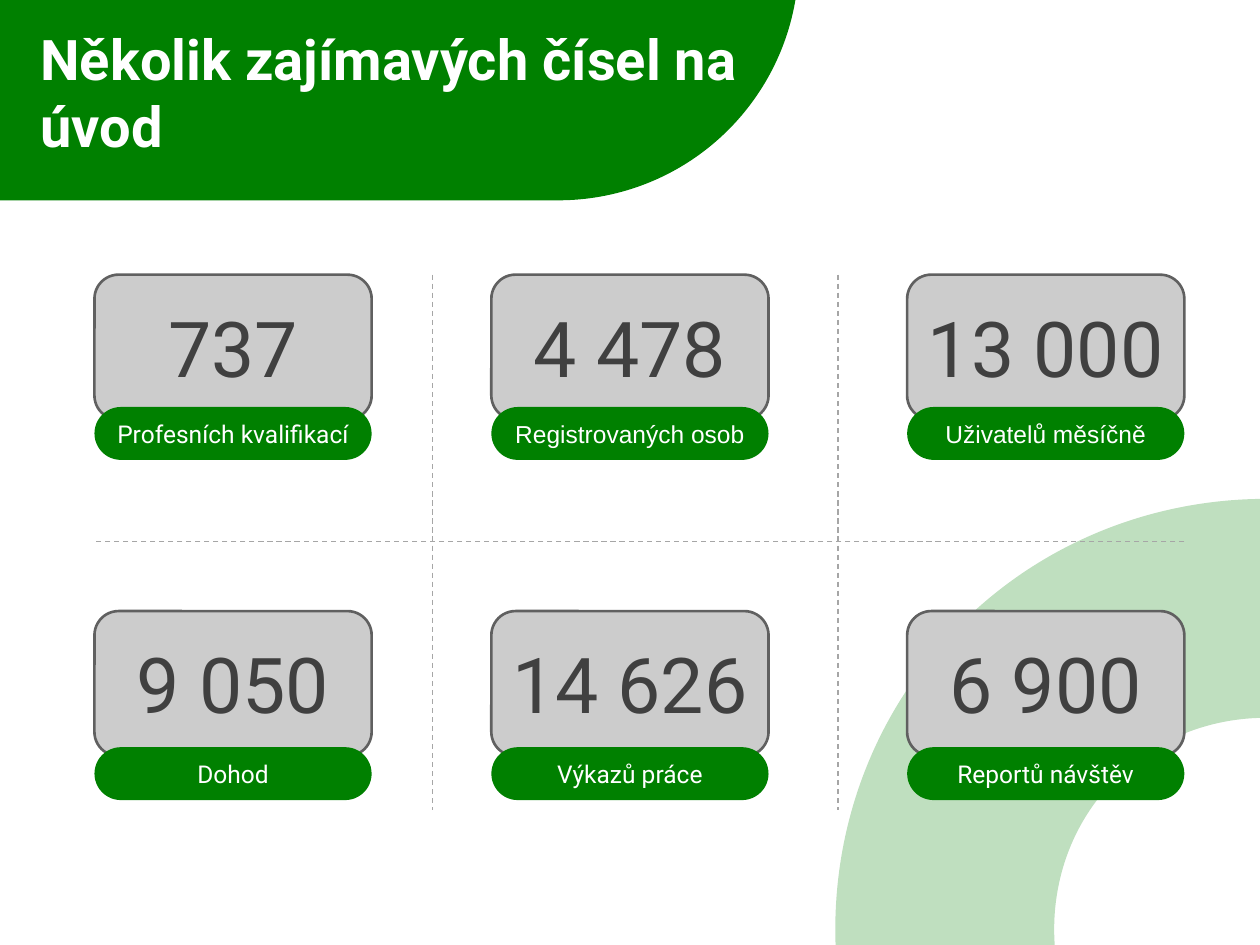
from pptx import Presentation
from pptx.dml.color import RGBColor
from pptx.enum.dml import MSO_LINE_DASH_STYLE as DASH
from pptx.enum.shapes import MSO_CONNECTOR, MSO_SHAPE
from pptx.enum.text import MSO_ANCHOR, MSO_AUTO_SIZE, PP_ALIGN
from pptx.oxml.ns import qn
from pptx.util import Inches, Pt
from lxml.etree import SubElement

COLORS = {
    "green": "008000",
    "card": "CCCCCC",
    "border": "606060",
    "number": "404040",
    "divider": "A6A6A6",
    "white": "FFFFFF",
}

# Grid of statistics, in inches
COLUMNS = (0.75, 3.9, 7.2)
CARD_TOPS = (2.18, 4.85)
LABEL_TOPS = (3.23, 5.93)
CARD_WIDTH, CARD_HEIGHT, LABEL_HEIGHT = 2.2, 1.15, 0.42
GRID_RIGHT, GRID_BOTTOM = COLUMNS[-1] + CARD_WIDTH, 6.43

STATISTICS = (
    (("737", "Profesních kvalifikací", "Roboto"),
     ("4 478", "Registrovaných osob", "Arial"),
     ("13 000", "Uživatelů měsíčně", "Arial")),
    (("9 050", "Dohod", "Roboto"),
     ("14 626", "Výkazů práce", "Roboto"),
     ("6 900", "Reportů návštěv", "Roboto")),
)


def rgb(name):
    return RGBColor.from_string(COLORS[name])


def add_shape(slide, kind, box, fill, border=None, rounding=None):
    shape = slide.shapes.add_shape(kind, *map(Inches, box))
    shape.shadow.inherit = False
    shape.fill.solid()
    shape.fill.fore_color.rgb = rgb(fill)
    if border:
        shape.line.color.rgb = rgb(border)
        shape.line.width = Pt(1.5)
    else:
        shape.line.fill.background()
    if rounding is not None:
        shape.adjustments[0] = rounding
    return shape


def write(shape, text, size, color, font="Roboto", align=PP_ALIGN.CENTER, bold=False):
    frame = shape.text_frame
    frame.text = text
    frame.word_wrap = True
    frame.vertical_anchor = MSO_ANCHOR.MIDDLE
    paragraph = frame.paragraphs[0]
    paragraph.alignment = align
    run_font = paragraph.runs[0].font
    run_font.name, run_font.size, run_font.bold = font, Pt(size), bold
    run_font.color.rgb = rgb(color)


def add_header(slide):
    # Pale ring in the lower right corner
    ring = add_shape(slide, MSO_SHAPE.BLOCK_ARC, (6.69, 3.9, 6.95, 7.18), "green")
    ring.rotation = 313.9
    ring_color = ring.fill._xPr.find(qn("a:solidFill"))[0]
    SubElement(ring_color, qn("a:alpha")).set("val", "25000")

    # Green banner behind the title
    banner = add_shape(slide, MSO_SHAPE.ROUNDED_RECTANGLE,
                       (-3.5, -2.23, 9.84, 3.82), "green", rounding=0.5)

    title = slide.shapes.title
    title.left, title.top, title.width, title.height = map(
        Inches, (0.22, 0.17, 5.96, 1.11))
    write(title, "Několik zajímavých čísel na úvod", 32, "white",
          align=PP_ALIGN.LEFT, bold=True)
    title.text_frame.auto_size = MSO_AUTO_SIZE.NONE
    for backdrop in (ring, banner):
        title.element.addprevious(backdrop.element)


def add_divider(slide, start, end):
    divider = slide.shapes.add_connector(
        MSO_CONNECTOR.STRAIGHT, *map(Inches, start + end))
    divider.line.color.rgb = rgb("divider")
    divider.line.width = Pt(0.75)
    divider.line.dash_style = DASH.DASH
    SubElement(divider.element.spPr, qn("a:effectLst"))


def add_statistic(slide, left, card_top, label_top, number, caption, font):
    card = add_shape(slide, MSO_SHAPE.ROUNDED_RECTANGLE,
                     (left, card_top, CARD_WIDTH, CARD_HEIGHT), "card", "border")
    write(card, number, 44, "number")
    frame = card.text_frame
    frame.margin_left = frame.margin_right = Inches(0.02)
    frame.margin_top, frame.margin_bottom = 0, Inches(0.01)

    label = add_shape(slide, MSO_SHAPE.ROUNDED_RECTANGLE,
                      (left, label_top, CARD_WIDTH, LABEL_HEIGHT), "green", rounding=0.5)
    write(label, caption, 14, "white", font)


def main():
    prs = Presentation()
    prs.slide_width, prs.slide_height = Inches(10), Inches(7.5)
    slide = prs.slides.add_slide(prs.slide_layouts[5])
    add_header(slide)

    # Dashed lines between the columns and rows
    for x in (3.43, 6.65):
        add_divider(slide, (x, CARD_TOPS[0]), (x, GRID_BOTTOM))
    add_divider(slide, (GRID_RIGHT, 4.3), (COLUMNS[0], 4.3))

    # Number cards with their captions
    for card_top, label_top, row in zip(CARD_TOPS, LABEL_TOPS, STATISTICS):
        for left, statistic in zip(COLUMNS, row):
            add_statistic(slide, left, card_top, label_top, *statistic)

    prs.save("out.pptx")


if __name__ == "__main__":
    main()
